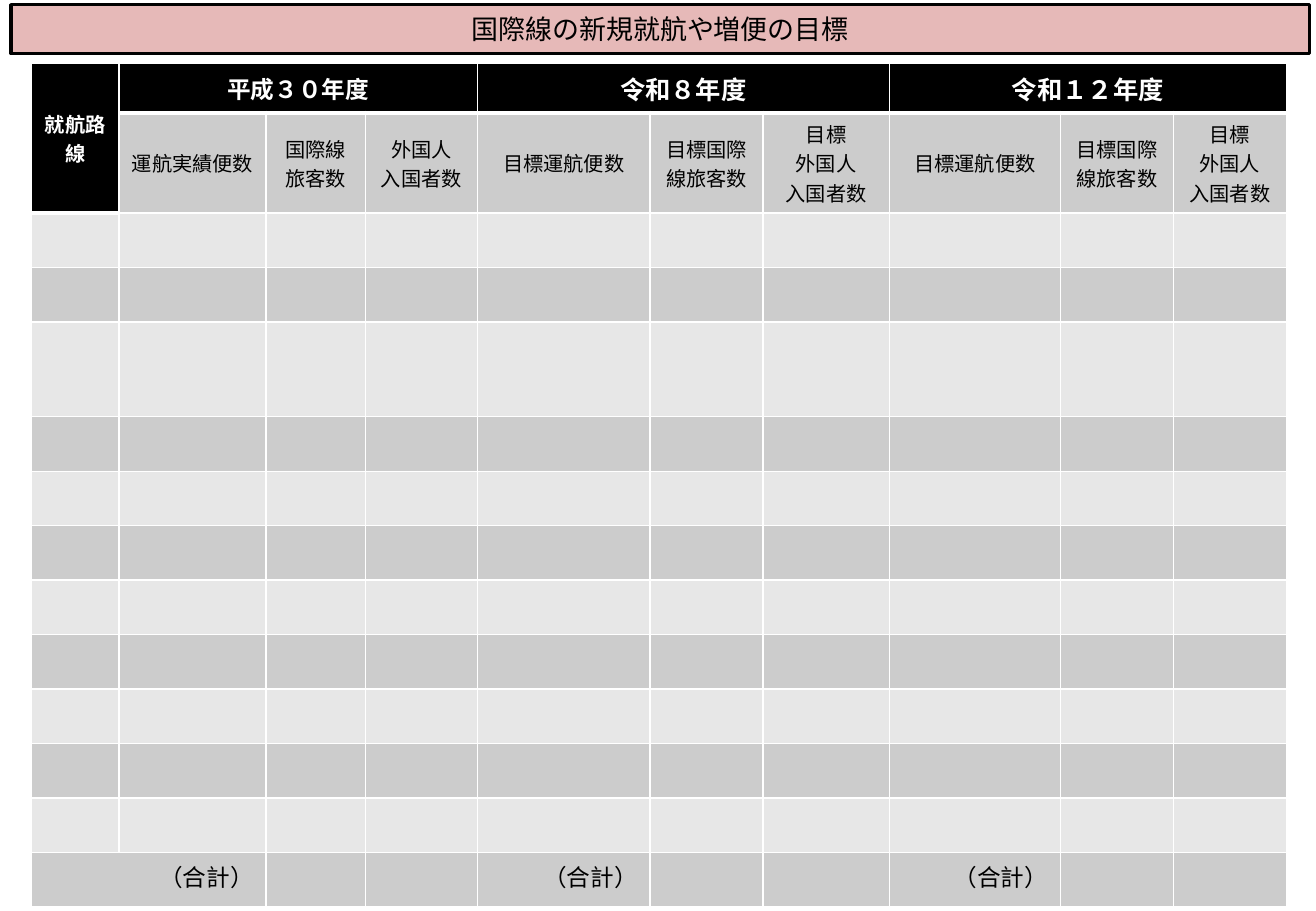
from dataclasses import dataclass

from lxml.etree import SubElement
from pptx import Presentation
from pptx.dml.color import RGBColor as Rgb
from pptx.enum.shapes import MSO_SHAPE as Shape
from pptx.enum.text import MSO_ANCHOR as Anchor, PP_ALIGN as Align
from pptx.oxml import parse_xml
from pptx.oxml.ns import nsdecls, qn
from pptx.util import Cm, Pt


@dataclass(frozen=True)
class Theme:
    black: str = "000000"
    white: str = "FFFFFF"
    pink: str = "E6B9B8"
    dark_band: str = "CCCCCC"
    light_band: str = "E7E7E7"
    latin: str = "Calibri"
    japanese: str = "Noto Sans CJK JP"
    title_size: int = 16
    era_size: int = 15
    total_size: int = 14
    label_size: int = 12


class SlideBuilder:
    def __init__(self, slide, theme):
        self.slide = slide
        self.theme = theme

    def add_text(self, frame, text, size, color, align=Align.CENTER, bold=False, latin=None):
        """Add one paragraph per line of text."""
        for number, line in enumerate(text.split("\n")):
            para = frame.add_paragraph() if number else frame.paragraphs[0]
            para.alignment = align
            span = para.add_run()
            span.text = line
            font = span.font
            font.size, font.bold = Pt(size), bold
            font.color.rgb = Rgb.from_string(color)
            font.name = latin or self.theme.latin
            SubElement(font._element, qn("a:ea")).set("typeface", self.theme.japanese)

    def title_bar(self, text, left, top, width, height):
        theme = self.theme
        box = self.slide.shapes.add_shape(
            Shape.RECTANGLE, Cm(left), Cm(top), Cm(width), Cm(height))
        box.shadow.inherit = False
        box.fill.solid()
        box.fill.fore_color.rgb = Rgb.from_string(theme.pink)
        box.line.color.rgb = Rgb.from_string(theme.black)
        box.line.width = Pt(2)
        box.text_frame.vertical_anchor = Anchor.MIDDLE
        self.add_text(box.text_frame, text, theme.title_size, theme.black, latin=theme.japanese)

    def table(self, left, top, widths, heights):
        frame = self.slide.shapes.add_table(
            len(heights), len(widths), Cm(left), Cm(top), Cm(sum(widths)), Cm(sum(heights)))
        table = frame.table
        table.first_row = table.horz_banding = False
        for column, width in zip(table.columns, widths):
            column.width = Cm(width)
        for row, height in zip(table.rows, heights):
            row.height = Cm(height)
        return table

    def style_cell(self, cell, fill, top=1, bottom=1):
        cell.fill.solid()
        cell.fill.fore_color.rgb = Rgb.from_string(fill)
        sides = {"lnL": 1, "lnR": 1, "lnT": top, "lnB": bottom}
        for place, (side, width) in enumerate(sides.items()):
            border = parse_xml(
                f'<a:{side} {nsdecls("a")} w="{int(Pt(width))}"><a:solidFill>'
                f'<a:srgbClr val="{self.theme.white}"/></a:solidFill></a:{side}>')
            cell._tc.get_or_add_tcPr().insert(place, border)

    def fill_cell(self, cell, text, size, color, align=Align.CENTER,
                  bold=False, anchor=Anchor.MIDDLE):
        cell.vertical_anchor = anchor
        self.add_text(cell.text_frame, text, size, color, align, bold)


COLUMN_WIDTHS = [1.83, 3.07, 2.08, 2.34, 3.61, 2.36, 2.64, 3.58, 2.36, 2.36]
ROW_HEIGHTS = [1.04, 2.06, 1.14, 1.14, 1.98] + [1.14] * 9
TARGETS = ["目標運航便数", "目標国際線旅客数", "目標\n外国人\n入国者数"]
RESULTS = ["運航実績便数", "国際線旅客数", "外国人\n入国者数"]


def main():
    theme = Theme()
    deck = Presentation()
    deck.slide_width, deck.slide_height = Cm(27.51), Cm(19.05)
    page = SlideBuilder(deck.slides.add_slide(deck.slide_layouts[6]), theme)

    # Title
    page.title_bar("国際線の新規就航や増便の目標", 0.23, 0.1, 27.15, 1.02)

    # Table bands and borders
    table = page.table(0.66, 1.32, COLUMN_WIDTHS, ROW_HEIGHTS)
    for row in range(len(ROW_HEIGHTS)):
        for column in range(len(COLUMN_WIDTHS)):
            if row == 0 or (row == 1 and column == 0):
                page.style_cell(table.cell(row, column), theme.black, bottom=3)
            else:
                band = theme.dark_band if row % 2 else theme.light_band
                page.style_cell(table.cell(row, column), band, top=3 if row == 1 else 1)

    # Route heading and joined total cell
    table.cell(0, 0).merge(table.cell(1, 0))
    page.fill_cell(table.cell(0, 0), "就航路線", theme.label_size, theme.white, bold=True)
    last = len(ROW_HEIGHTS) - 1
    table.cell(last, 0).merge(table.cell(last, 1))

    # Fiscal years: heading, three labels and a total each
    years = [("平成３０年度", theme.total_size, RESULTS, 0),
             ("令和８年度", theme.era_size, TARGETS, 4),
             ("令和１２年度", theme.era_size, TARGETS, 7)]
    for start, (year, size, labels, total) in zip((1, 4, 7), years):
        table.cell(0, start).merge(table.cell(0, start + 2))
        page.fill_cell(table.cell(0, start), year, size, theme.white, bold=True)
        for column, label in enumerate(labels, start):
            page.fill_cell(table.cell(1, column), label, theme.label_size, theme.black)
        page.fill_cell(table.cell(last, total), "（合計）", theme.total_size, theme.black,
                       Align.RIGHT, anchor=Anchor.TOP)

    deck.save("out.pptx")


if __name__ == "__main__":
    main()
